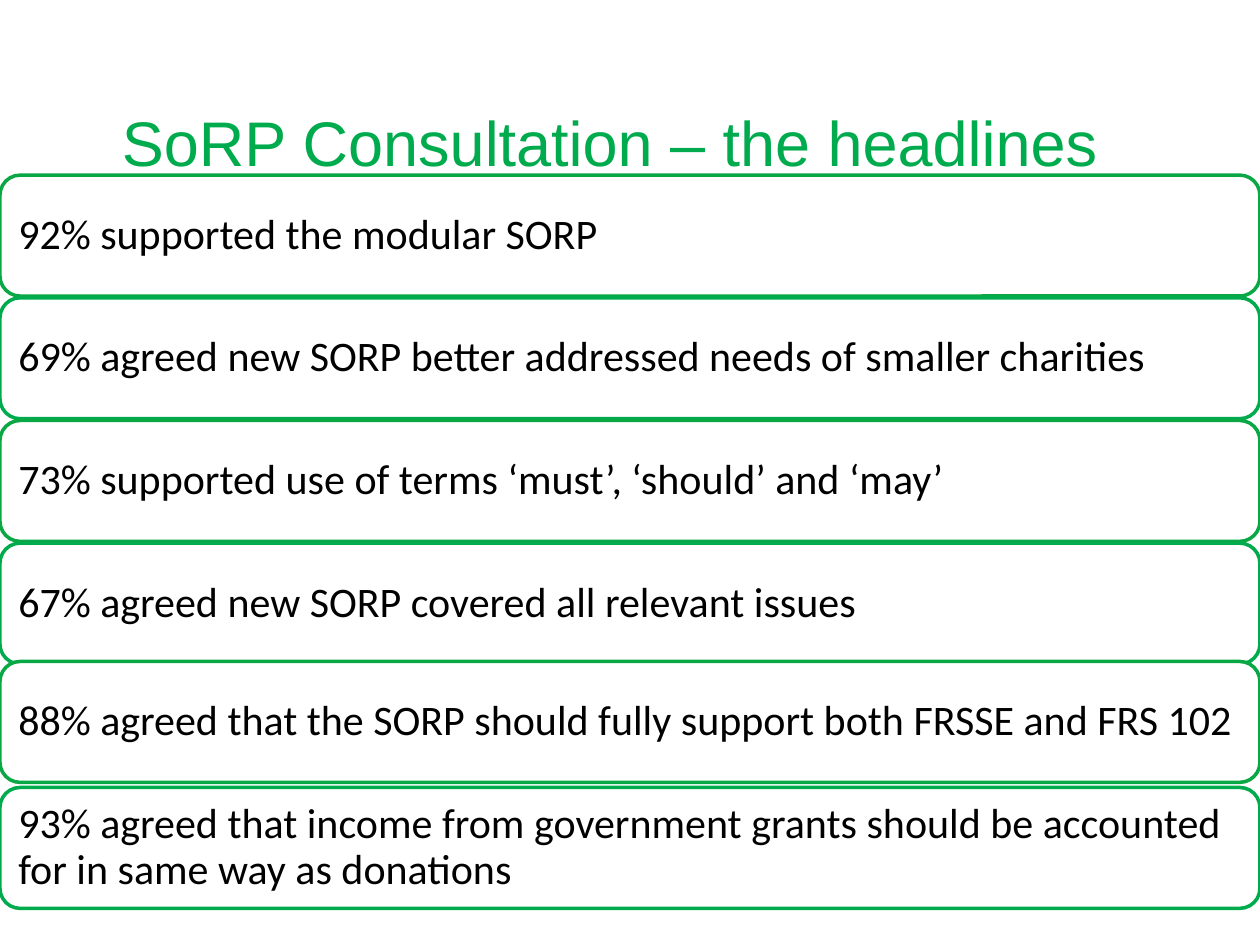
from pptx import Presentation
from pptx.dml.color import RGBColor
from pptx.enum.shapes import MSO_SHAPE
from pptx.enum.text import MSO_ANCHOR, PP_ALIGN
from pptx.util import Pt

TITLE = "SoRP Consultation – the headlines"
# Top edge in points, finding
FINDINGS = [
    (100.1, "92% supported the modular SORP"),
    (170.2, "69% agreed new SORP better addressed needs of smaller charities"),
    (240.3, "73% supported use of terms ‘must’, ‘should’ and ‘may’"),
    (310.4, "67% agreed new SORP covered all relevant issues"),
    (378, "88% agreed that the SORP should fully support both FRSSE and FRS 102"),
    (450, "93% agreed that income from government grants should be accounted "
          "for in same way as donations"),
]
PAGE_WIDTH, PAGE_HEIGHT = 720, 540
BAR_HEIGHT = 69.1


class Theme:
    green = RGBColor(0x00, 0xAB, 0x4E)
    deep_green = RGBColor(0x0A, 0xA7, 0x45)
    white = RGBColor(0xFF, 0xFF, 0xFF)
    black = RGBColor(0x00, 0x00, 0x00)
    title_font, title_size = "Arial", 36
    body_font, body_size = "Calibri", 24
    line_width = 2


def write(box, text, *, font, size, color, inset_y, line_spacing=1.0):
    frame = box.text_frame
    frame.word_wrap = True
    frame.vertical_anchor = MSO_ANCHOR.MIDDLE
    frame.margin_left = frame.margin_right = Pt(7.2)
    frame.margin_top = frame.margin_bottom = Pt(inset_y)
    para = frame.paragraphs[0]
    para.alignment = PP_ALIGN.LEFT
    para.line_spacing = line_spacing
    span = para.add_run()
    span.text = text
    span.font.name = font
    span.font.size = Pt(size)
    span.font.color.rgb = color


def add_bar(page, top, outline):
    bar = page.shapes.add_shape(
        MSO_SHAPE.ROUNDED_RECTANGLE, Pt(0), Pt(top), Pt(PAGE_WIDTH), Pt(BAR_HEIGHT))
    bar.shadow.inherit = False
    bar.fill.solid()
    bar.fill.fore_color.rgb = Theme.white
    bar.line.color.rgb = outline
    bar.line.width = Pt(Theme.line_width)
    return bar


def main():
    deck = Presentation()
    deck.slide_width, deck.slide_height = Pt(PAGE_WIDTH), Pt(PAGE_HEIGHT)
    page = deck.slides.add_slide(deck.slide_layouts[6])

    heading = page.shapes.add_textbox(Pt(62.6), Pt(22.3), Pt(648), Pt(116.6))
    write(heading, TITLE, font=Theme.title_font, size=Theme.title_size,
          color=Theme.green, inset_y=3.6)

    outlines = (Theme.deep_green, Theme.green)
    for index, (top, finding) in enumerate(FINDINGS):
        bar = add_bar(page, top, outlines[index % 2])
        write(bar, finding, font=Theme.body_font, size=Theme.body_size,
              color=Theme.black, inset_y=7.2, line_spacing=0.9)

    deck.save("out.pptx")


if __name__ == "__main__":
    main()
